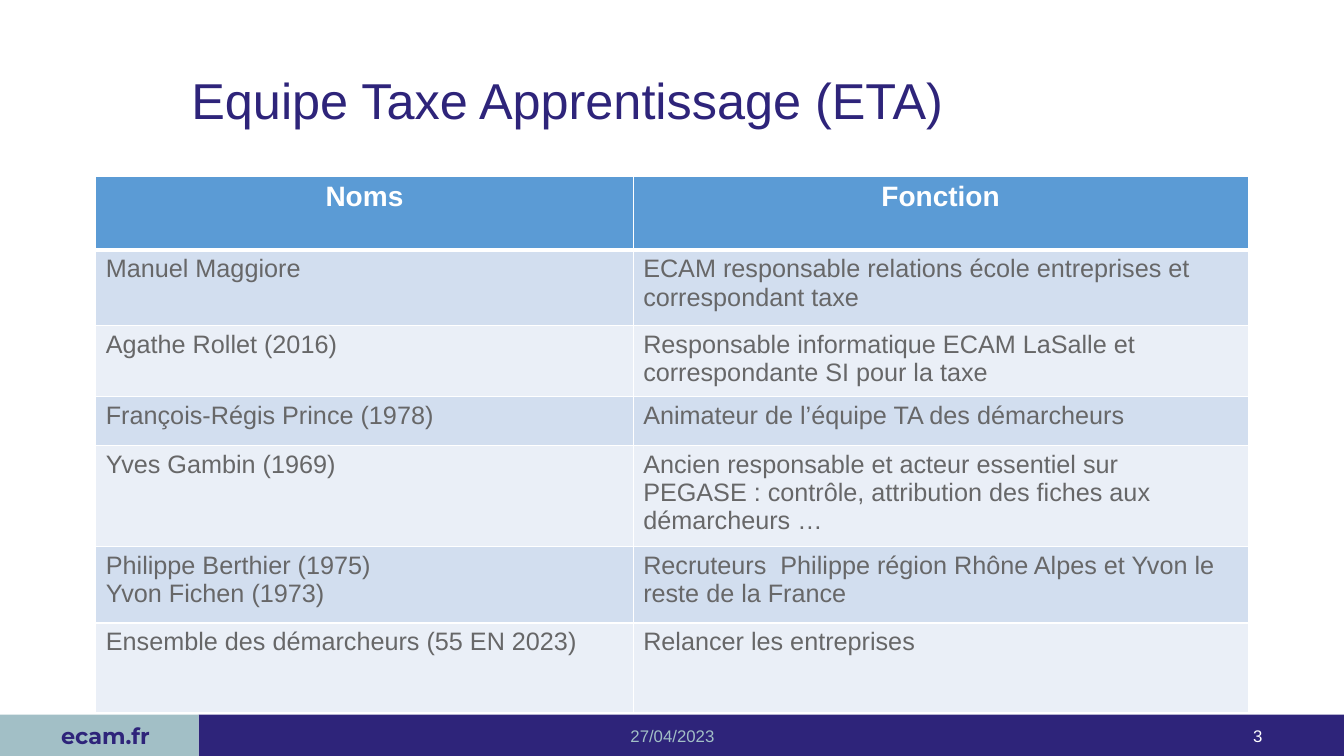
"""Build the slide presenting the apprenticeship tax team."""
from typing import NamedTuple

from lxml import etree
from pptx import Presentation
from pptx.dml.color import RGBColor
from pptx.enum.shapes import MSO_SHAPE
from pptx.enum.text import MSO_ANCHOR, PP_ALIGN
from pptx.oxml.ns import qn
from pptx.slide import Slide
from pptx.table import _Cell
from pptx.text.text import TextFrame
from pptx.util import Inches, Pt

RECTANGLE = MSO_SHAPE.RECTANGLE
TOP, MIDDLE = MSO_ANCHOR.TOP, MSO_ANCHOR.MIDDLE
LEFT, CENTER, RIGHT = PP_ALIGN.LEFT, PP_ALIGN.CENTER, PP_ALIGN.RIGHT

INDIGO = RGBColor(0x2E, 0x24, 0x7A)
SAGE = RGBColor(0xA2, 0xBF, 0xC6)
WHITE = RGBColor(0xFF, 0xFF, 0xFF)
GREY = RGBColor(0x67, 0x67, 0x68)
HEADER_BLUE = RGBColor(0x5B, 0x9B, 0xD5)
BAND_COLORS = (RGBColor(0xEA, 0xEF, 0xF7), RGBColor(0xD2, 0xDE, 0xEF))

FOOTER_TOP, FOOTER_HEIGHT = 7.09, 0.41
TABLE_LEFT, TABLE_TOP = 0.95, 1.75
COLUMN_WIDTHS = (5.33, 6.1)


class Area(NamedTuple):
    left: float
    top: float
    width: float
    height: float


class Style(NamedTuple):
    size: float
    color: RGBColor
    align: PP_ALIGN = LEFT
    anchor: MSO_ANCHOR = MIDDLE
    bold: bool = False
    font: str = "Arial"
    spacing: float = 1.0


class Label(NamedTuple):
    text: str
    area: Area
    style: Style


class Member(NamedTuple):
    names: str
    role: str
    height: float


LABELS = (
    Label("Equipe Taxe Apprentissage (ETA)", Area(1.8, 0.3, 10.73, 1.45),
          Style(36, INDIGO, spacing=0.9)),
    Label("27/04/2023", Area(4.42, 7.1, 4.5, 0.4), Style(12, SAGE, CENTER)),
    Label("3", Area(9.62, 7.1, 3, 0.4), Style(12, WHITE, RIGHT)),
)
SITE_STYLE = Style(16, INDIGO, CENTER, bold=True, font="Montserrat")
HEADER_STYLE = Style(20, WHITE, CENTER, TOP, bold=True)
BODY_STYLE = Style(18, GREY, anchor=TOP)

ROWS = (
    Member("Noms", "Fonction", 0.73),
    Member("Manuel Maggiore",
           "ECAM responsable relations école entreprises et correspondant taxe", 0.75),
    Member("Agathe Rollet (2016)",
           "Responsable informatique ECAM LaSalle et correspondante SI pour la taxe", 0.65),
    Member("François-Régis Prince (1978)", "Animateur de l’équipe TA des démarcheurs", 0.49),
    Member("Yves Gambin (1969)",
           "Ancien responsable et acteur essentiel sur PEGASE : contrôle, "
           "attribution des fiches aux démarcheurs …", 0.7),
    Member("Philippe Berthier (1975)\nYvon Fichen (1973)",
           "Recruteurs  Philippe région Rhône Alpes et Yvon le reste de la France", 0.76),
    Member("Ensemble des démarcheurs (55 EN 2023)", "Relancer les entreprises", 0.89),
)


def write_text(frame: TextFrame, text: str, style: Style) -> None:
    """Fill a text frame and format each of its paragraphs."""
    frame.text = text
    formats = {"name": style.font, "size": Pt(style.size), "bold": style.bold}
    for para in frame.paragraphs:
        para.alignment = style.align
        para.line_spacing = style.spacing
        for span in para.runs:
            for name, value in formats.items():
                setattr(span.font, name, value)
            span.font.color.rgb = style.color


def add_label(page: Slide, label: Label) -> None:
    """Add a wrapped text box."""
    box = page.shapes.add_textbox(*map(Inches, label.area))
    box.text_frame.word_wrap = True
    box.text_frame.vertical_anchor = label.style.anchor
    write_text(box.text_frame, label.text, label.style)


def add_band(page: Slide, left: float, width: float, color: RGBColor) -> TextFrame:
    """Add a footer band and return its text frame."""
    area = Area(left, FOOTER_TOP, width, FOOTER_HEIGHT)
    band = page.shapes.add_shape(RECTANGLE, *map(Inches, area))
    band.shadow.inherit = False
    band.fill.solid()
    band.fill.fore_color.rgb = color
    band.line.fill.background()
    band.text_frame.vertical_anchor = MIDDLE
    return band.text_frame


def set_borders(cell: _Cell, widths: dict[str, float]) -> None:
    """Draw white borders with the given width for each side."""
    properties = cell._tc.get_or_add_tcPr()
    for side, width in widths.items():
        line = etree.SubElement(properties, qn(f"a:ln{side}"), w=str(Pt(width)))
        fill = etree.SubElement(line, qn("a:solidFill"))
        etree.SubElement(fill, qn("a:srgbClr"), val=str(WHITE))


def add_team_table(page: Slide) -> None:
    """Add the table of team members and their roles."""
    area = Area(TABLE_LEFT, TABLE_TOP, sum(COLUMN_WIDTHS), sum(row.height for row in ROWS))
    frame = page.shapes.add_table(len(ROWS), len(COLUMN_WIDTHS), *map(Inches, area))
    table = frame.table
    for column, width in zip(table.columns, COLUMN_WIDTHS):
        column.width = Inches(width)
    for index, member in enumerate(ROWS):
        table.rows[index].height = Inches(member.height)
        style = BODY_STYLE if index else HEADER_STYLE
        color = BAND_COLORS[index % 2] if index else HEADER_BLUE
        borders = {"L": 1, "R": 1, "T": 3 if index == 1 else 1, "B": 1 if index else 3}
        for cell, text in zip(table.rows[index].cells, (member.names, member.role)):
            set_borders(cell, borders)
            cell.fill.solid()
            cell.fill.fore_color.rgb = color
            cell.vertical_anchor = style.anchor
            write_text(cell.text_frame, text, style)


def main() -> None:
    """Assemble and save the deck."""
    deck = Presentation()
    deck.slide_width, deck.slide_height = Inches(13.33), Inches(7.5)
    page = deck.slides.add_slide(deck.slide_layouts[6])
    add_band(page, 1.97, 11.36, INDIGO)
    site = add_band(page, 0, 1.97, SAGE)
    site.margin_left = Inches(0.22)
    write_text(site, "ecam.fr", SITE_STYLE)
    for label in LABELS:
        add_label(page, label)
    add_team_table(page)
    deck.save("out.pptx")


if __name__ == "__main__":
    main()
